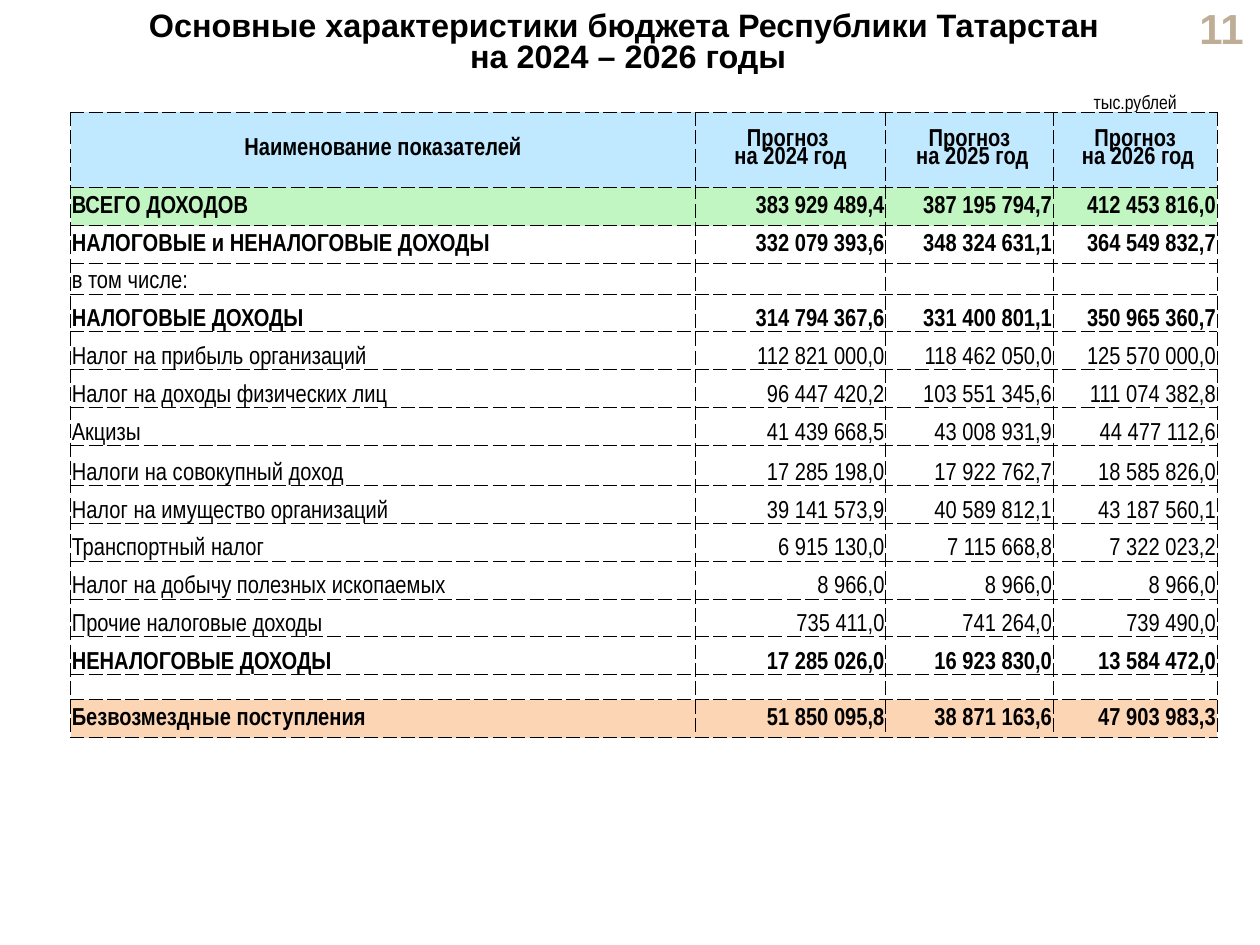
from dataclasses import dataclass

from lxml import etree
from pptx import Presentation
from pptx.dml.color import RGBColor
from pptx.enum import text
from pptx.oxml import ns
from pptx.util import Inches, Pt

ALIGN = text.PP_ALIGN
ANCHOR = text.MSO_ANCHOR


@dataclass(frozen=True)
class Theme:
    ink: str = "000000"
    white: str = "FFFFFF"
    number: str = "BFAE96"
    header: str = "C0E9FF"
    income: str = "C1F6C2"
    grants: str = "FCD5B5"
    title_font: str = "Arial"
    table_font: str = "Arial Narrow"
    title_size: float = 18.5
    number_size: float = 24
    table_size: float = 14
    unit_size: float = 11
    empty_size: float = 8


THEME = Theme()


@dataclass(frozen=True)
class Row:
    values: tuple[str, ...]
    height: float = 0.3
    bold: bool = False
    fill: str = THEME.white
    anchor: ANCHOR = ANCHOR.BOTTOM
    size: float = THEME.table_size
    centred: bool = False
    frame: str = THEME.ink


EMPTY = ("",) * 3
COLUMNS = (4.96, 1.51, 1.33, 1.3)
ROWS = (
    Row((*EMPTY, "тыс.рублей"), size=THEME.unit_size, centred=True, frame=THEME.white),
    Row(("Наименование показателей", "Прогноз \nна 2024 год",
         "Прогноз\v на 2025 год", "Прогноз\n на 2026 год"),
        0.6, True, THEME.header, ANCHOR.MIDDLE, centred=True),
    Row(("ВСЕГО ДОХОДОВ", "383 929 489,4", "387 195 794,7", "412 453 816,0"),
        bold=True, fill=THEME.income, anchor=ANCHOR.MIDDLE),
    Row(("НАЛОГОВЫЕ и НЕНАЛОГОВЫЕ ДОХОДЫ", "332 079 393,6", "348 324 631,1", "364 549 832,7"),
        bold=True, anchor=ANCHOR.MIDDLE),
    Row(("в том числе:", *EMPTY), 0.23),
    Row(("НАЛОГОВЫЕ ДОХОДЫ", "314 794 367,6", "331 400 801,1", "350 965 360,7"), bold=True),
    Row(("Налог на прибыль организаций", "112 821 000,0", "118 462 050,0", "125 570 000,0")),
    Row(("Налог на доходы физических лиц", "96 447 420,2", "103 551 345,6", "111 074 382,8")),
    Row(("Акцизы", "41 439 668,5", "43 008 931,9", "44 477 112,6")),
    Row(("Налоги на совокупный доход", "17 285 198,0", "17 922 762,7", "18 585 826,0"), 0.32),
    Row(("Налог на имущество организаций", "39 141 573,9", "40 589 812,1", "43 187 560,1")),
    Row(("Транспортный налог", "6 915 130,0", "7 115 668,8", "7 322 023,2")),
    Row(("Налог на добычу полезных ископаемых", "8 966,0", "8 966,0", "8 966,0")),
    Row(("Прочие налоговые доходы", "735 411,0", "741 264,0", "739 490,0")),
    Row(("НЕНАЛОГОВЫЕ ДОХОДЫ", "17 285 026,0", "16 923 830,0", "13 584 472,0"), bold=True),
    Row(("", *EMPTY), 0.2),
    Row(("Безвозмездные поступления", "51 850 095,8", "38 871 163,6", "47 903 983,3"),
        bold=True, fill=THEME.grants, anchor=ANCHOR.MIDDLE),
)


def set_all(target, formats: dict) -> None:
    for name, value in formats.items():
        setattr(target, name, value)


def style_text(frame, align: ALIGN, font: str, size: float, bold: bool,
               color: str = THEME.ink, spacing: float = 0.8) -> None:
    for para in frame.paragraphs:
        set_all(para, {"alignment": align, "line_spacing": spacing, "space_before": Pt(0)})
        for span in para.runs:
            set_all(span.font, {"name": font, "size": Pt(size), "bold": bold})
            span.font.color.rgb = RGBColor.from_string(color)
        if not para.runs:
            end = etree.SubElement(para._p, ns.qn("a:endParaRPr"))
            end.set("sz", str(int(THEME.empty_size * 100)))


def add_border(cell, side: str, color: str, dashed: bool) -> None:
    line = etree.SubElement(cell._tc.get_or_add_tcPr(), ns.qn(f"a:ln{side}"))
    line.set("w", str(Pt(0.5 if dashed else 1)))
    fill = etree.SubElement(line, ns.qn("a:solidFill"))
    etree.SubElement(fill, ns.qn("a:srgbClr")).set("val", color)
    etree.SubElement(line, ns.qn("a:prstDash")).set("val", "sysDash" if dashed else "solid")


def fill_cell(cell, row: Row, column: int) -> None:
    side_inset = Inches(0.08 if row.centred else 0.01)
    set_all(cell, {
        "vertical_anchor": row.anchor,
        "margin_left": side_inset,
        "margin_right": side_inset,
        "margin_top": Inches(0 if row.centred else 0.01),
        "margin_bottom": 0,
    })
    for side in "LRTB":
        color = THEME.ink if side == "B" else row.frame
        add_border(cell, side, color, color == THEME.ink)
    cell.fill.solid()
    cell.fill.fore_color.rgb = RGBColor.from_string(row.fill)
    cell.text = row.values[column]
    align = ALIGN.CENTER if row.centred else ALIGN.RIGHT if column else ALIGN.LEFT
    style_text(cell.text_frame, align, THEME.table_font, row.size, row.bold,
               spacing=0.8 if row.centred else 1.0)


def add_budget_table(page) -> None:
    height = sum(row.height for row in ROWS)
    table = page.shapes.add_table(
        len(ROWS), len(COLUMNS), Inches(0.56), Inches(0.59),
        Inches(sum(COLUMNS)), Inches(height)).table
    set_all(table, {"first_row": False, "horz_banding": False})
    for column, width in zip(table.columns, COLUMNS):
        column.width = Inches(width)
    for index, row in enumerate(ROWS):
        table.rows[index].height = Inches(row.height)
        for column in range(len(COLUMNS)):
            fill_cell(table.cell(index, column), row, column)


def add_title(page) -> None:
    title = page.shapes.title
    set_all(title, {"left": Inches(0.56), "top": Inches(0.05),
                    "width": Inches(8.85), "height": Inches(0.63)})
    frame = title.text_frame
    frame.text = "Основные характеристики бюджета Республики Татарстан \vна 2024 – 2026 годы"
    set_all(frame, {"vertical_anchor": ANCHOR.TOP, "word_wrap": True,
                    "auto_size": text.MSO_AUTO_SIZE.NONE})
    style_text(frame, ALIGN.CENTER, THEME.title_font, THEME.title_size, True)


def add_page_number(page) -> None:
    box = page.shapes.add_textbox(Inches(9.11), Inches(0.05), Inches(0.86), Inches(0.34))
    frame = box.text_frame
    frame.text = "11"
    set_all(frame, {"vertical_anchor": ANCHOR.MIDDLE, "word_wrap": True})
    style_text(frame, ALIGN.RIGHT, THEME.title_font, THEME.number_size, True,
               THEME.number, 1.0)


def main() -> None:
    deck = Presentation()
    set_all(deck, {"slide_width": Inches(10), "slide_height": Inches(7.5)})
    page = deck.slides.add_slide(deck.slide_layouts[5])
    add_page_number(page)
    add_title(page)
    add_budget_table(page)
    deck.save("out.pptx")


if __name__ == "__main__":
    main()
